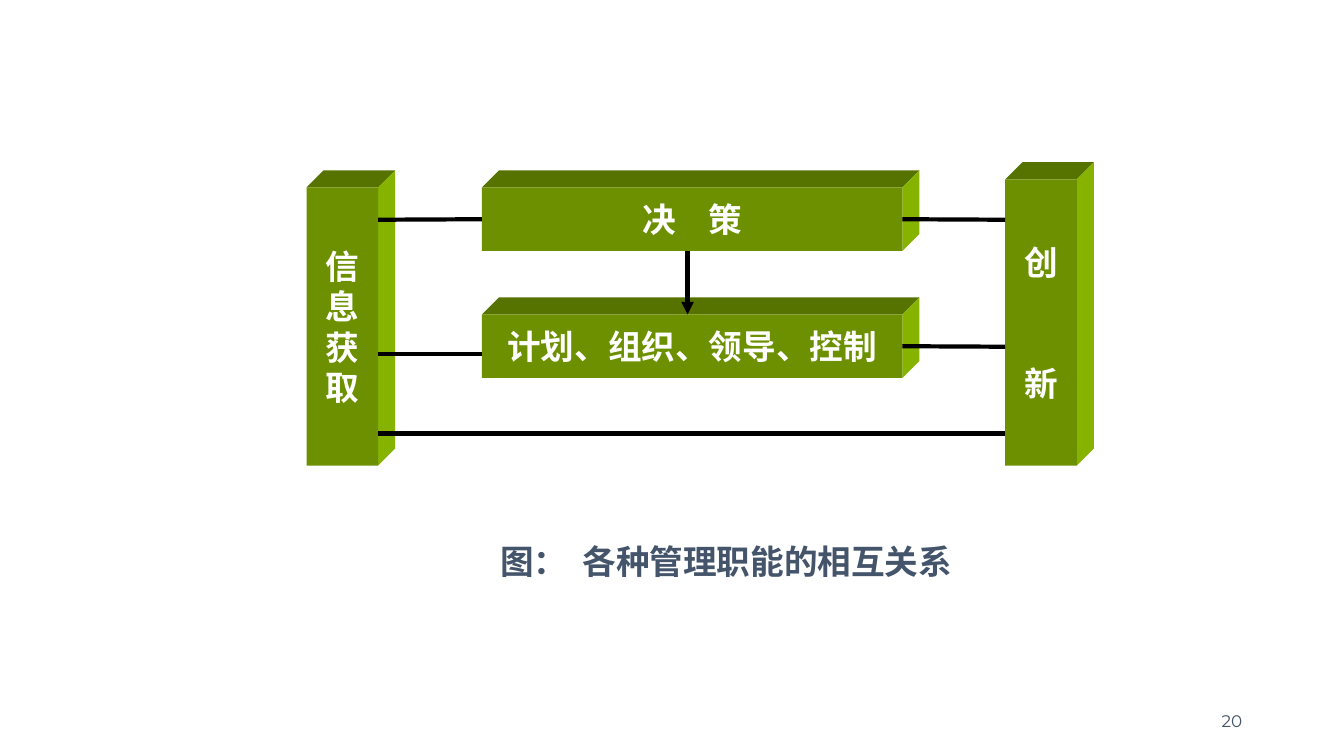
import pptx
import pptx.util
import pptx.dml.color
import pptx.enum.shapes
import pptx.enum.text
import pptx.oxml.ns
from lxml import etree

Inches, Pt = pptx.util.Inches, pptx.util.Pt
SHAPE = pptx.enum.shapes.MSO_SHAPE
ALIGN = pptx.enum.text.PP_ALIGN
qn = pptx.oxml.ns.qn


def rgb(value):
    return pptx.dml.color.RGBColor.from_string(value)


class Diagram:
    FRONT, TOP, SIDE = "6C9000", "567300", "86B200"
    LINE, INK, WHITE = "000000", "44546A", "FFFFFF"
    CJK = "Noto Sans CJK SC"
    DEPTH = 0.17

    def __init__(self, slide):
        self.s = slide

    def paint(self, sp, color):
        sp.shadow.inherit = False
        sp.fill.solid()
        sp.fill.fore_color.rgb = rgb(color)
        sp.line.fill.background()

    def text(self, sp, lines, color, align=ALIGN.CENTER, size=24, font="Arial",
             bold=True, gap=0, before=0, wrap=False):
        """Write one paragraph per line; gap widens each space, in points."""
        tf = sp.text_frame
        frame_format = {"word_wrap": wrap,
                        "auto_size": pptx.enum.text.MSO_AUTO_SIZE.NONE,
                        "vertical_anchor": pptx.enum.text.MSO_ANCHOR.MIDDLE}
        for key, value in frame_format.items():
            setattr(tf, key, value)
        for i, line in enumerate(lines):
            p = tf.add_paragraph() if i else tf.paragraphs[0]
            p.alignment = align
            p.space_before = Pt(before if i else 0)
            for part in line.replace(" ", "| |").split("|"):
                r = p.add_run()
                r.text = part
                for key, value in {"name": font, "size": Pt(size), "bold": bold}.items():
                    setattr(r.font, key, value)
                r.font.color.rgb = rgb(color)
                rPr = r.font._element
                etree.SubElement(rPr, qn("a:ea"), typeface=self.CJK)
                if part == " ":
                    rPr.set("spc", str(round(gap * 100)))

    def face(self, points, color):
        corners = [(Inches(x), Inches(y)) for x, y in points]
        builder = self.s.shapes.build_freeform(*corners[0])
        builder.add_line_segments(corners[1:], close=True)
        self.paint(builder.convert_to_shape(), color)

    def block(self, x, y, w, h, lines, **style):
        """Draw a box with its top and right faces, and return the front."""
        d, right, bottom = self.DEPTH, x + w, y + h
        self.face([(x, y), (x + d, y - d), (right + d, y - d), (right, y)], self.TOP)
        self.face([(right, y), (right + d, y - d), (right + d, bottom - d),
                   (right, bottom)], self.SIDE)
        sp = self.s.shapes.add_shape(SHAPE.RECTANGLE, Inches(x), Inches(y),
                                     Inches(w), Inches(h))
        self.paint(sp, self.FRONT)
        self.text(sp, lines, self.WHITE, **style)
        return sp

    def line(self, x1, y1, x2, y2, begin=None, end=None, arrow=False):
        cn = self.s.shapes.add_connector(
            pptx.enum.shapes.MSO_CONNECTOR.STRAIGHT,
            Inches(x1), Inches(y1), Inches(x2), Inches(y2))
        if begin:
            cn.begin_connect(begin, 3)
        if end:
            cn.end_connect(end, 1)
        cn.line.color.rgb = rgb(self.LINE)
        cn.line.width = Pt(3)
        if arrow:
            etree.SubElement(cn.line._get_or_add_ln(), qn("a:tailEnd"), type="triangle")
        etree.SubElement(cn._element.spPr, qn("a:effectLst"))

    def caption(self, x, y, w, h, words):
        sp = self.s.shapes.title
        box = {"left": x, "top": y, "width": w, "height": h}
        for key, value in box.items():
            setattr(sp, key, Inches(value))
        self.text(sp, [words], self.INK, align=ALIGN.LEFT, font=self.CJK, gap=5.4)

    def page_number(self, x, y, w, h, number):
        sp = self.s.shapes.add_textbox(Inches(x), Inches(y), Inches(w), Inches(h))
        self.text(sp, [number], self.INK, align=ALIGN.RIGHT, size=12,
                  font="Montserrat", bold=False, wrap=True)


def main():
    prs = pptx.Presentation()
    prs.slide_width, prs.slide_height = Inches(13.33), Inches(7.5)
    d = Diagram(prs.slides.add_slide(prs.slide_layouts[5]))

    # Blocks
    info_right, mid_left, mid_right, innovation_left = 3.75, 4.78, 8.95, 9.97
    d.block(3.04, 1.86, 0.71, 2.76, "信息获取")
    d.block(innovation_left, 1.78, 0.71, 2.84, "创新", before=58)
    mid_width = mid_right - mid_left
    decision = d.block(mid_left, 1.86, mid_width, 0.63, ["决 策"], gap=17.3)
    functions = d.block(mid_left, 3.12, mid_width, 0.63, ["计划、组织、领导、控制"])

    # Links
    d.line(info_right, 2.18, mid_left, 2.18, end=decision)
    d.line(info_right, 3.51, mid_left, 3.51)
    d.line(mid_right, 2.18, innovation_left, 2.18, begin=decision)
    d.line(mid_right, 3.44, innovation_left, 3.44, begin=functions)
    d.line(info_right, 4.3, innovation_left, 4.3)
    d.line(6.82, 2.49, 6.82, 3.12, arrow=True)

    # Caption and page number
    d.caption(4.86, 5.32, 4.96, 0.5, "图： 各种管理职能的相互关系")
    d.page_number(9.42, 6.95, 3, 0.4, "20")

    prs.save("out.pptx")


if __name__ == "__main__":
    main()
